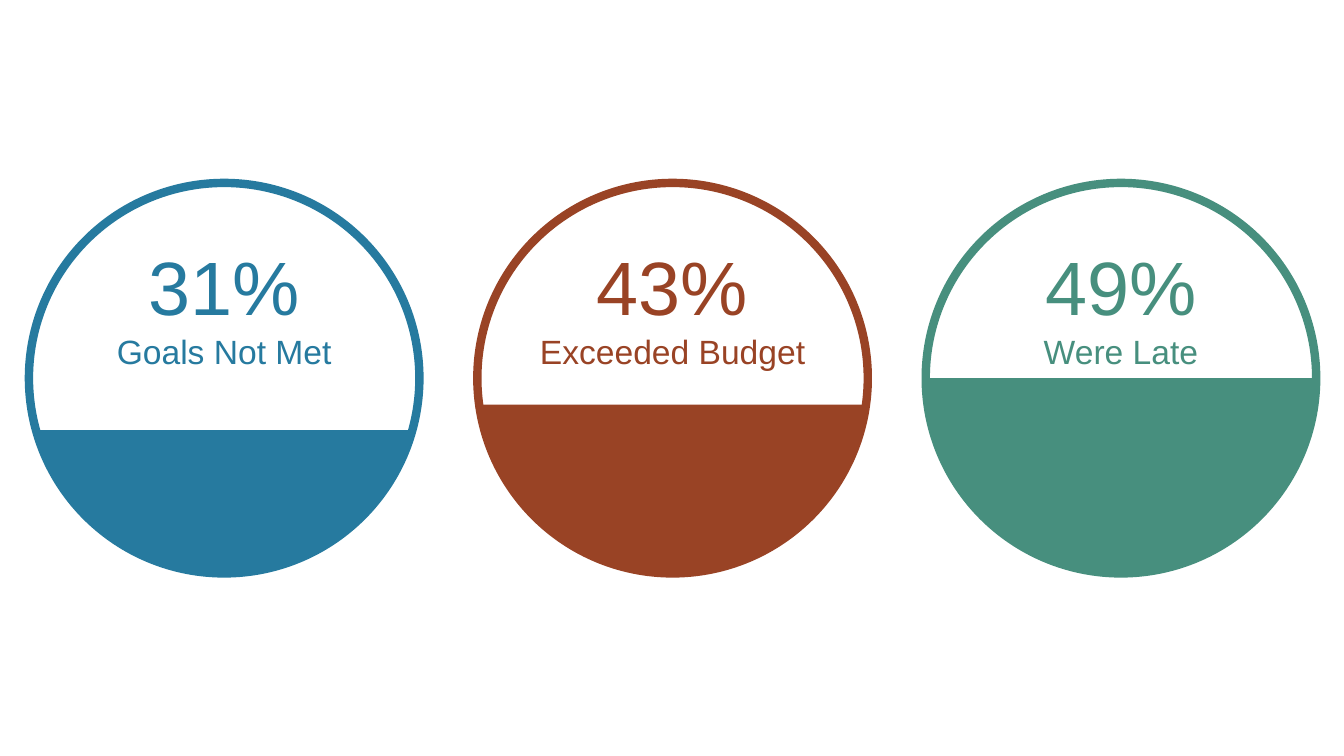
"""Build a slide of three circular gauges, each filled to its level."""
from math import asin, cos, pi, sin, tan

from lxml.etree import SubElement
from pptx import Presentation
from pptx.dml.color import RGBColor
from pptx.enum.shapes import MSO_SHAPE
from pptx.enum.text import MSO_ANCHOR, PP_ALIGN
from pptx.oxml.ns import qn
from pptx.util import Cm, Pt

GAUGES = [
    {"value": "31%", "label": "Goals Not Met", "color": "267A9F", "drop": 1.31, "split": True},
    {"value": "43%", "label": "Exceeded Budget", "color": "994325", "drop": 0.67, "split": False},
    {"value": "49%", "label": "Were Late", "color": "478F7E", "drop": 0, "split": False},
]
FIRST_X, CENTER_Y, STEP, RADIUS = 5.65, 9.53, 11.3, 4.92
LEVEL_SHIFT = -0.03
FRAME = {"margin_left": 0, "margin_right": 0, "margin_top": 0,
         "margin_bottom": 0, "word_wrap": True, "vertical_anchor": MSO_ANCHOR.TOP}


def rgb(value):
    return RGBColor.from_string(value)


def paint(sp, color):
    sp.shadow.inherit = False
    sp.fill.solid()
    sp.fill.fore_color.rgb = rgb(color)


def add_run(p, text, size, color):
    r = p.add_run()
    r.text = text
    for name, value in {"name": "Arial", "size": Pt(size)}.items():
        setattr(r.font, name, value)
    r.font.color.rgb = rgb(color)


def add_ring(shapes, x, gauge):
    sp = shapes.add_shape(MSO_SHAPE.OVAL, Cm(x - RADIUS), Cm(CENTER_Y - RADIUS),
                          Cm(2 * RADIUS), Cm(2 * RADIUS))
    paint(sp, "FFFFFF")
    sp.line.color.rgb = rgb(gauge["color"])
    sp.line.width = Pt(6)
    tf = sp.text_frame
    for name, value in FRAME.items():
        setattr(tf, name, value)
    p = tf.paragraphs[0]
    add_run(p, gauge["value"], 54, gauge["color"])
    if gauge["split"]:
        p = tf.add_paragraph()
    else:
        p.add_line_break()
    add_run(p, gauge["label"], 24, gauge["color"])
    for p in tf.paragraphs:
        p.alignment = PP_ALIGN.CENTER


def arc(start, end):
    """Return the two handles and the end point of a Bézier arc on the unit circle."""
    k = 4 / 3 * tan((end - start) / 4)
    return [(cos(start) - k * sin(start), sin(start) + k * cos(start)),
            (cos(end) + k * sin(end), sin(end) - k * cos(end)),
            (cos(end), sin(end))]


def add_level(shapes, x, gauge):
    start = asin(gauge["drop"] / RADIUS)
    outline = [(-cos(start), sin(start)), (cos(start), sin(start)),
               *arc(start, pi / 2), *arc(pi / 2, pi - start)]
    points = [(Cm(x + RADIUS * u), Cm(CENTER_Y + RADIUS * v)) for u, v in outline]
    builder = shapes.build_freeform(*points[0])
    builder.add_line_segments(points[1:], close=True)
    sp = builder.convert_to_shape()
    lines = list(sp.element.iter(qn("a:lnTo")))
    for i in (1, 4):
        triple = lines[i:i + 3]
        outline_xml = triple[0].getparent()
        curve = SubElement(outline_xml, qn("a:cubicBezTo"))
        triple[0].addprevious(curve)
        for line in triple:
            curve.append(line[0])
            outline_xml.remove(line)
    paint(sp, gauge["color"])
    sp.line.fill.background()


def main():
    prs = Presentation()
    prs.slide_width, prs.slide_height = Cm(33.87), Cm(19.05)
    s = prs.slides.add_slide(prs.slide_layouts[6])
    for i, gauge in enumerate(GAUGES):
        group = s.shapes.add_group_shape()
        x = FIRST_X + i * STEP
        add_ring(group.shapes, x, gauge)
        add_level(group.shapes, x + LEVEL_SHIFT, gauge)
    prs.save("out.pptx")


if __name__ == "__main__":
    main()
